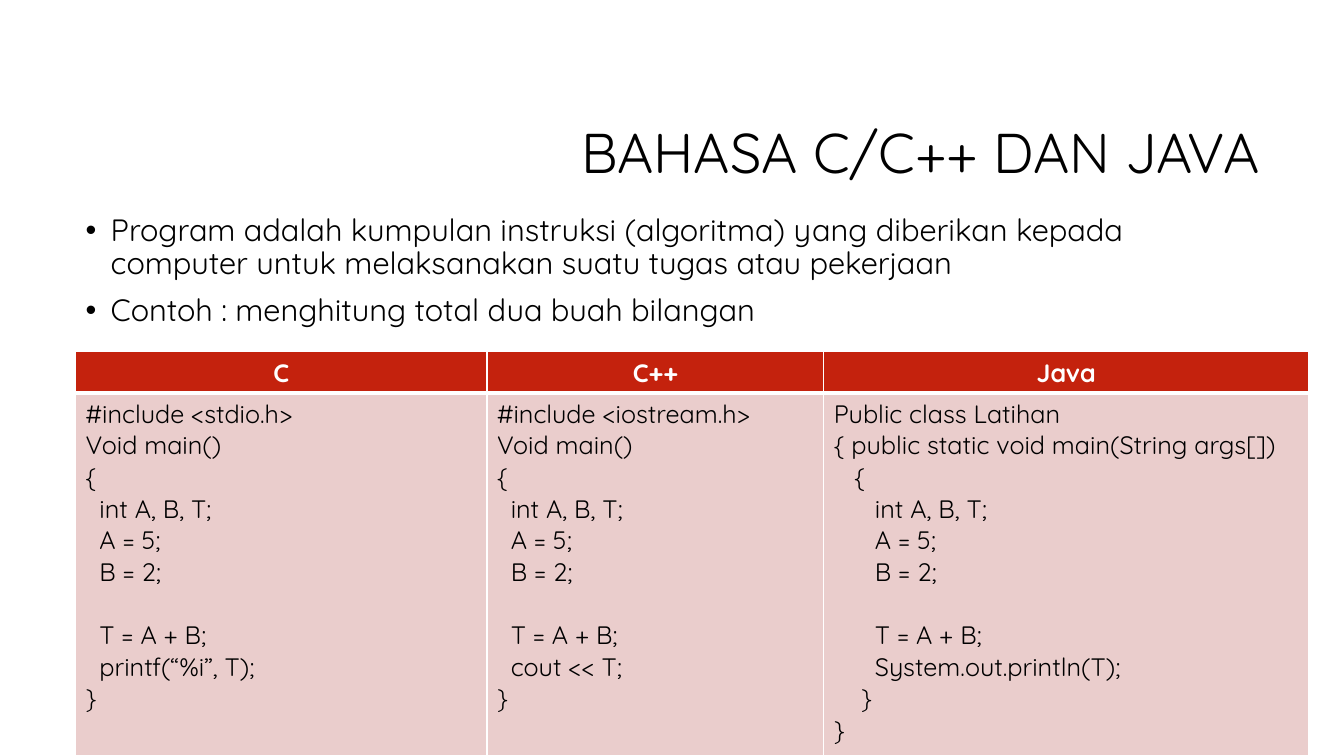
from dataclasses import dataclass

from lxml import etree
from pptx import Presentation
from pptx import util as u
from pptx.dml import color
from pptx.enum import text
from pptx.oxml import ns

FONT = "Quicksand"
COLORS = {"ink": "000000", "paper": "FFFFFF", "header": "C4220D", "body": "EACDCC"}


@dataclass
class TextStyle:
    size: int
    color: str = "ink"
    bold: bool = False
    align: text.PP_ALIGN = text.PP_ALIGN.LEFT
    line_spacing: float = 1.0
    space_before: int = 0
    bullet: str = ""


@dataclass
class Language:
    name: str
    width: float
    code: str


TITLE = TextStyle(40, align=text.PP_ALIGN.RIGHT, line_spacing=0.9)
POINT = TextStyle(22, line_spacing=0.9, space_before=10, bullet="•")
HEADING = TextStyle(18, "paper", True, text.PP_ALIGN.CENTER)
CODE = TextStyle(18)

POINTS = [
    "Program adalah kumpulan instruksi (algoritma) yang diberikan kepada "
    "computer untuk melaksanakan suatu tugas atau pekerjaan",
    "Contoh : menghitung total dua buah bilangan",
]

LANGUAGES = [
    Language("C", 4.08, """#include <stdio.h>
Void main()
{
  int A, B, T;
  A = 5;
  B = 2;

  T = A + B;
  printf(“%i”, T);
}"""),
    Language("C++", 3.34, """#include <iostream.h>
Void main()
{
  int A, B, T;
  A = 5;
  B = 2;

  T = A + B;
  cout << T;
}"""),
    Language("Java", 4.81, """Public class Latihan
{ public static void main(String args[])
   {
      int A, B, T;
      A = 5;
      B = 2;

      T = A + B;
      System.out.println(T);
    }
}"""),
]


def rgb(name: str) -> color.RGBColor:
    return color.RGBColor.from_string(COLORS[name])


def add_bullet(para, mark: str) -> None:
    properties = para._p.get_or_add_pPr()
    properties.set("marL", str(u.Inches(0.25)))
    properties.set("indent", str(u.Inches(-0.25)))
    etree.SubElement(properties, ns.qn("a:buFont"), typeface="Arial")
    etree.SubElement(properties, ns.qn("a:buChar"), char=mark)


def write(frame, lines: list[str], style: TextStyle) -> None:
    for index, line in enumerate(lines):
        para = frame.add_paragraph() if index else frame.paragraphs[0]
        if style.bullet:
            add_bullet(para, style.bullet)
        para.alignment = style.align
        para.line_spacing = style.line_spacing
        if index and style.space_before:
            para.space_before = u.Pt(style.space_before)
        para.font.size = u.Pt(style.size)
        span = para.add_run()
        span.text = line
        span.font.name = FONT
        span.font.size = u.Pt(style.size)
        span.font.bold = style.bold
        span.font.color.rgb = rgb(style.color)


def add_text(page, left: float, top: float, width: float, height: float,
             lines: list[str], style: TextStyle, anchor: text.MSO_ANCHOR) -> None:
    box = page.shapes.add_textbox(*map(u.Inches, (left, top, width, height)))
    box.text_frame.word_wrap = True
    box.text_frame.vertical_anchor = anchor
    write(box.text_frame, lines, style)


def add_borders(cell, top: int, bottom: int) -> None:
    properties = cell._tc.get_or_add_tcPr()
    for side, points in {"L": 1, "R": 1, "T": top, "B": bottom}.items():
        line = etree.SubElement(properties, ns.qn(f"a:ln{side}"), w=str(u.Pt(points)))
        fill = etree.SubElement(line, ns.qn("a:solidFill"))
        etree.SubElement(fill, ns.qn("a:srgbClr"), val=COLORS["paper"])


def fill_cell(cell, lines: list[str], style: TextStyle, fill: str,
              top: int, bottom: int) -> None:
    add_borders(cell, top, bottom)
    cell.fill.solid()
    cell.fill.fore_color.rgb = rgb(fill)
    write(cell.text_frame, lines, style)


def add_code_table(page, left: float, top: float, languages: list[Language]) -> None:
    heights = (0.41, 3.6)
    width = sum(language.width for language in languages)
    table = page.shapes.add_table(
        len(heights), len(languages),
        *map(u.Inches, (left, top, width, sum(heights)))).table
    for row, height in zip(table.rows, heights):
        row.height = u.Inches(height)
    for column, language in enumerate(languages):
        table.columns[column].width = u.Inches(language.width)
        fill_cell(table.cell(0, column), [language.name], HEADING, "header", 1, 3)
        fill_cell(table.cell(1, column), language.code.split("\n"), CODE, "body", 3, 1)


def main() -> None:
    deck = Presentation()
    deck.slide_width = u.Inches(13.33)
    deck.slide_height = u.Inches(7.5)
    page = deck.slides.add_slide(deck.slide_layouts[6])
    page.background.fill.solid()
    page.background.fill.fore_color.rgb = rgb("paper")
    add_text(page, 3.17, 0.84, 9.42, 1.41, ["BAHASA C/C++ DAN JAVA"], TITLE,
             text.MSO_ANCHOR.MIDDLE)
    add_text(page, 0.75, 2.08, 11.83, 1.3, POINTS, POINT, text.MSO_ANCHOR.TOP)
    add_code_table(page, 0.75, 3.49, LANGUAGES)
    deck.save("out.pptx")


if __name__ == "__main__":
    main()
